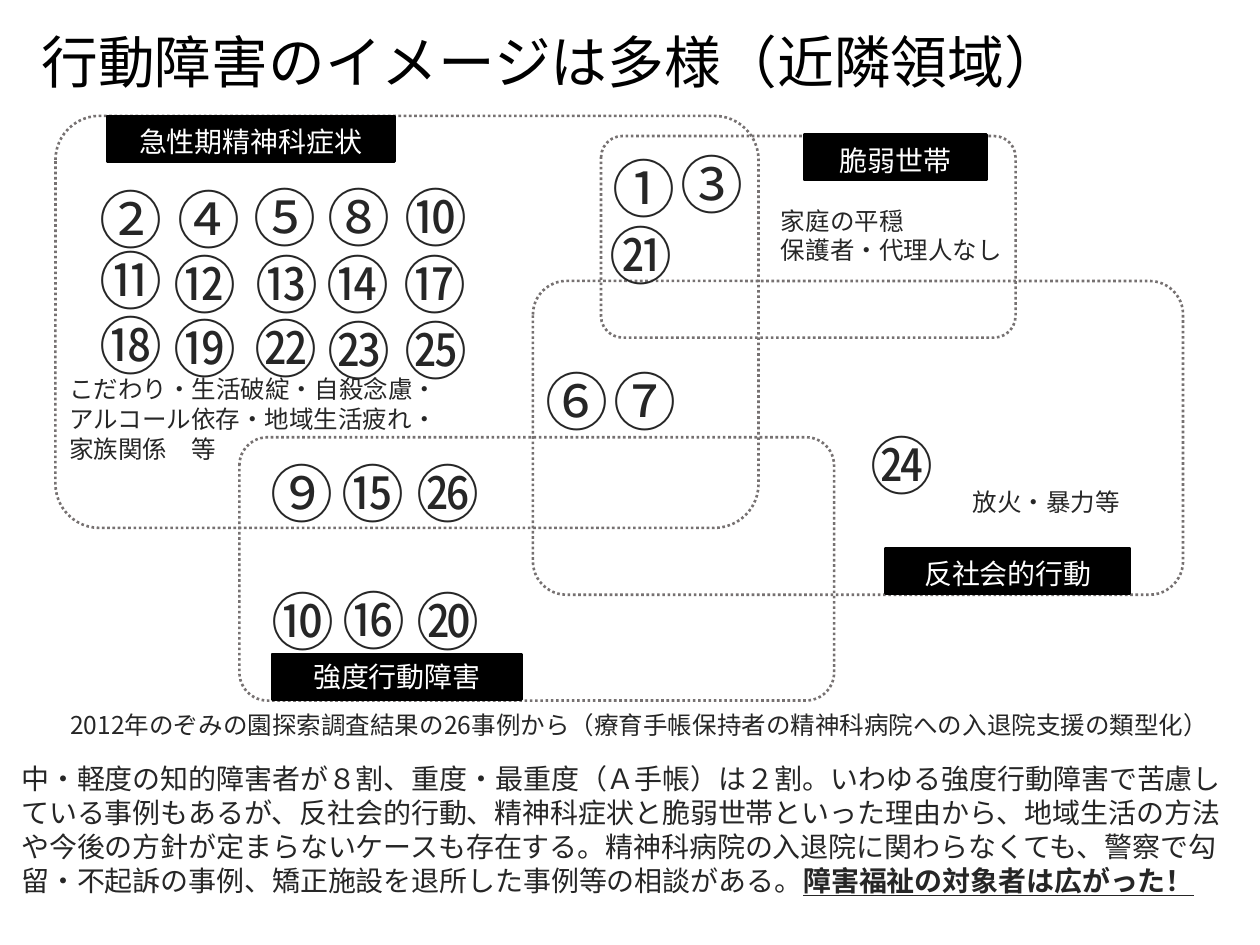
from pptx import Presentation
from pptx import util as u
from pptx.dml.color import RGBColor
from pptx.enum import dml, shapes, text
from pptx.oxml.ns import qn

PX = 9144
FONT = "Noto Sans CJK JP"
INK, BLACK, WHITE, GREY = "262626", "000000", "FFFFFF", "767171"

REGIONS = [
    (44, 92, 558, 327),
    (423, 223, 516, 249),
    (190, 347, 472, 209),
    (477, 108, 329, 160),
]
LABELS = [
    ("急性期精神科症状", 85, 92, 228, 22),
    ("強度行動障害", 216, 519, 198, 19.2),
    ("反社会的行動", 703, 435, 194, 22),
    ("脆弱世帯", 638, 107, 145, 22),
]
CASES = [
    ("②", 69, 136), ("④", 131, 136), ("⑤", 191, 134), ("⑧", 250, 134), ("⑩", 311, 134),
    ("⑪", 69, 184), ("⑫", 128, 187), ("⑬", 193, 187), ("⑭", 249, 187), ("⑰", 310, 187),
    ("⑱", 69, 236), ("⑲", 128, 238), ("㉒", 192, 238), ("㉓", 250, 240), ("㉕", 311, 240),
    ("①", 476, 111), ("③", 530, 108), ("㉑", 474, 164),
    ("⑥", 423, 280), ("⑦", 477, 280), ("㉔", 681, 331),
    ("⑨", 205, 353), ("⑮", 261, 353), ("㉖", 321, 353),
    ("⑩", 206, 455), ("⑯", 262, 454), ("⑳", 321, 455),
]
NOTES = [
    ("こだわり・生活破綻・自殺念慮・\nアルコール依存・地域生活疲れ・\n家族関係　等", 45, 292, 315, 81),
    ("家庭の平穏\n保護者・代理人なし", 610, 158, 197, 57),
    ("放火・暴力等", 762, 381, 138, 34),
    ("2012年のぞみの園探索調査結果の26事例から（療育手帳保持者の精神科病院への入退院支援の類型化）",
     46, 558, 938, 34),
]
SUMMARY = (
    "中・軽度の知的障害者が８割、重度・最重度（Ａ手帳）は２割。"
    "いわゆる強度行動障害で苦慮している事例もあるが、反社会的行動、精神科症状と脆弱世帯といった理由から、"
    "地域生活の方法や今後の方針が定まらないケースも存在する。"
    "精神科病院の入退院に関わらなくても、警察で勾留・不起訴の事例、矯正施設を退所した事例等の相談がある。"
)
CONCLUSION = "障害福祉の対象者は広がった！"


def emu(*lengths):
    """Turn px lengths into EMU."""
    return [n * PX for n in lengths]


def rgb(value):
    """Turn a hex string into a colour."""
    return RGBColor.from_string(value)


def format_text(tf, size, color, spacing, align=text.PP_ALIGN.LEFT):
    """Format every paragraph and run of a text frame."""
    for p in tf.paragraphs:
        p.alignment = align
        p.line_spacing = spacing
        for r in p.runs:
            r.font.size = u.Pt(size)
            r.font.name = FONT
            r.font.color.rgb = rgb(color)
            ea = r.font._element.makeelement(qn("a:ea"), {"typeface": FONT})
            r.font._element.find(qn("a:latin")).addnext(ea)


def add_title(s, words):
    """Place and format the title placeholder."""
    sp = s.shapes.title
    sp.left, sp.top, sp.width, sp.height = emu(23, 23, 969, 58)
    tf = sp.text_frame
    tf.text = words
    tf.auto_size = text.MSO_AUTO_SIZE.NONE
    tf.vertical_anchor = text.MSO_ANCHOR.MIDDLE
    format_text(tf, 32.4, BLACK, 0.9)


def add_text(s, words, box, size, spacing, wrap=False):
    """Add a text box and return its text frame."""
    tf = s.shapes.add_textbox(*emu(*box)).text_frame
    tf.text = words
    tf.word_wrap = wrap
    tf.auto_size = text.MSO_AUTO_SIZE.SHAPE_TO_FIT_TEXT
    format_text(tf, size, INK, u.Pt(spacing))
    return tf


def add_outlined(s, kind, box, adjustment, line):
    """Add a preset shape with a thin outline and no shadow."""
    sp = s.shapes.add_shape(kind, *emu(*box))
    sp.shadow.inherit = False
    sp.adjustments[0] = adjustment
    sp.line.color.rgb = rgb(line)
    sp.line.width = u.Pt(1.5)
    return sp


def add_region(s, box):
    """Add a dotted rounded region."""
    sp = add_outlined(s, shapes.MSO_SHAPE.ROUNDED_RECTANGLE, box, 0.107, GREY)
    sp.fill.background()
    sp.line.dash_style = dml.MSO_LINE.ROUND_DOT


def add_label(s, words, left, top, width, spacing):
    """Add a black region label."""
    box = (left, top, width, 36)
    sp = add_outlined(s, shapes.MSO_SHAPE.SNIP_1_RECTANGLE, box, 0, BLACK)
    sp.fill.solid()
    sp.fill.fore_color.rgb = rgb(BLACK)
    tf = sp.text_frame
    tf.text = words
    tf.vertical_anchor = text.MSO_ANCHOR.MIDDLE
    format_text(tf, 16, WHITE, u.Pt(spacing), text.PP_ALIGN.CENTER)


def add_summary(s):
    """Add the closing paragraph with its emphasised conclusion."""
    tf = add_text(s, SUMMARY, (7, 599, 985, 118), 16, 19.4, wrap=True)
    r = tf.paragraphs[0].add_run()
    r.text = CONCLUSION
    format_text(tf, 16, INK, u.Pt(19.4))
    r.font.bold = True
    r.font.underline = True


def main():
    """Build the slide."""
    prs = Presentation()
    prs.slide_width, prs.slide_height = emu(1000, 750)
    s = prs.slides.add_slide(prs.slide_layouts[5])
    add_title(s, "行動障害のイメージは多様（近隣領域）")
    for box in REGIONS:
        add_region(s, box)
    for number, left, top in CASES:
        add_text(s, number, (left, top, 71, 71), 36, 45)
    for label in LABELS:
        add_label(s, *label)
    for words, *box in NOTES:
        add_text(s, words, box, 14, 17)
    add_summary(s)
    prs.save("out.pptx")


if __name__ == "__main__":
    main()
